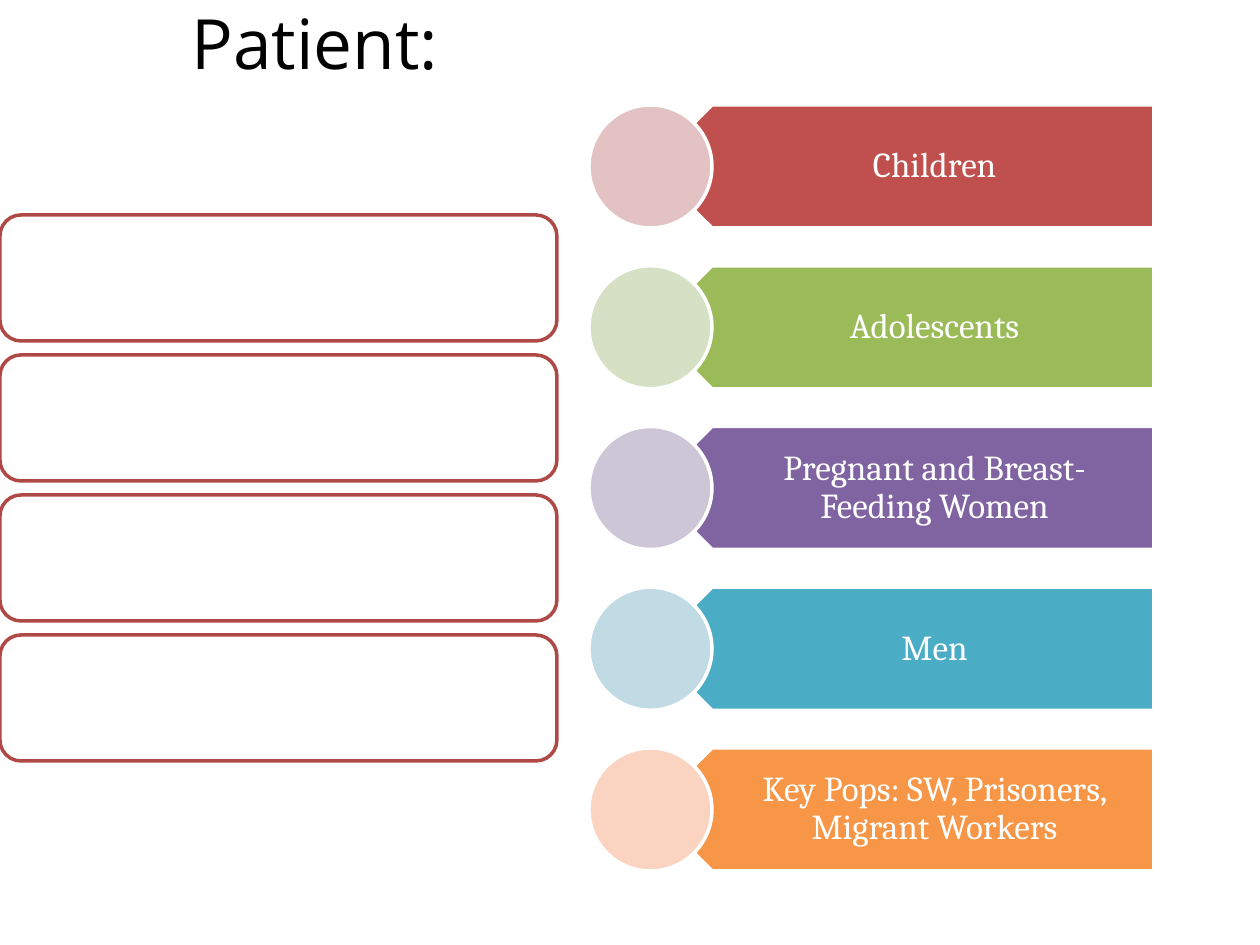
from pptx import Presentation
from pptx.dml.color import RGBColor
from pptx.enum.shapes import MSO_SHAPE
from pptx.enum.text import MSO_ANCHOR, PP_ALIGN
from pptx.util import Pt

EMU_PER_PX = 914400 / 126
GROUPS = [
    ("Children", "C0504D", "E2C2C2"),
    ("Adolescents", "9BBB59", "D5E0C4"),
    ("Pregnant and Breast-Feeding Women", "8064A2", "CDC6D7"),
    ("Men", "4BACC6", "C1DBE5"),
    ("Key Pops: SW, Prisoners, Migrant Workers", "F79646", "FBD3C1"),
]


def px(n):
    return round(n * EMU_PER_PX)


def color(hex_code):
    return RGBColor.from_string(hex_code)


def add_shape(s, kind, x, y, w, h, fill, line):
    sp = s.shapes.add_shape(kind, px(x), px(y), px(w), px(h))
    sp.shadow.inherit = False
    sp.fill.solid()
    sp.fill.fore_color.rgb = color(fill)
    sp.line.color.rgb = color(line)
    sp.line.width = Pt(2)
    return sp


def add_text(s, x, y, w, h, text, font, size, fill, insets=(13, 6, 13, 6)):
    """Add a centred, wrapped text box; insets are left, top, right, bottom."""
    tf = s.shapes.add_textbox(px(x), px(y), px(w), px(h)).text_frame
    tf.word_wrap = True
    tf.vertical_anchor = MSO_ANCHOR.MIDDLE
    tf.margin_left, tf.margin_top, tf.margin_right, tf.margin_bottom = map(px, insets)
    p = tf.paragraphs[0]
    p.text = text
    p.alignment = PP_ALIGN.CENTER
    p.font.name = font
    p.font.size = Pt(size)
    p.font.color.rgb = color(fill)
    return p


def add_blank_boxes(s, x, y, w, h, count, gap):
    """Stack equal rounded boxes to fill the given area."""
    box_h = (h - gap * (count - 1)) / count
    for i in range(count):
        add_shape(s, MSO_SHAPE.ROUNDED_RECTANGLE, x, y + i * (box_h + gap),
                  w, box_h, "FFFFFF", "AE4946")


def add_banner(s, x, y, w, h, label, fill, tint):
    """Add a left-pointing banner with a circle of diameter h over its tip."""
    bar_x = x + h / 2
    bar = add_shape(s, MSO_SHAPE.PENTAGON, bar_x, y, w - h / 2, h, fill, "FFFFFF")
    bar.rotation = 180
    text_x = bar_x + h / 4
    p = add_text(s, text_x, y, x + w - text_x, h, label, "Cambria", 20, "FFFFFF",
                 (54, 10, 20, 10))
    p.line_spacing = 0.9
    add_shape(s, MSO_SHAPE.OVAL, x, y, h, h, tint, "FFFFFF")


def add_banner_list(s, x, y, w, h, banner_h, groups):
    pitch = (h - banner_h) / (len(groups) - 1)
    for i, (label, fill, tint) in enumerate(groups):
        add_banner(s, x, y + i * pitch, w, banner_h, label, fill, tint)


def main():
    prs = Presentation()
    prs.slide_width, prs.slide_height = px(1260), px(945)
    s = prs.slides.add_slide(prs.slide_layouts[6])
    add_text(s, 0, 0, 630, 84, "Patient:", "Open Sans", 39.6, "000000")
    add_blank_boxes(s, 0, 215, 557, 546, 4, 14)
    add_banner_list(s, 589, 105, 565, 766, 123, GROUPS)
    prs.save("out.pptx")


if __name__ == "__main__":
    main()
